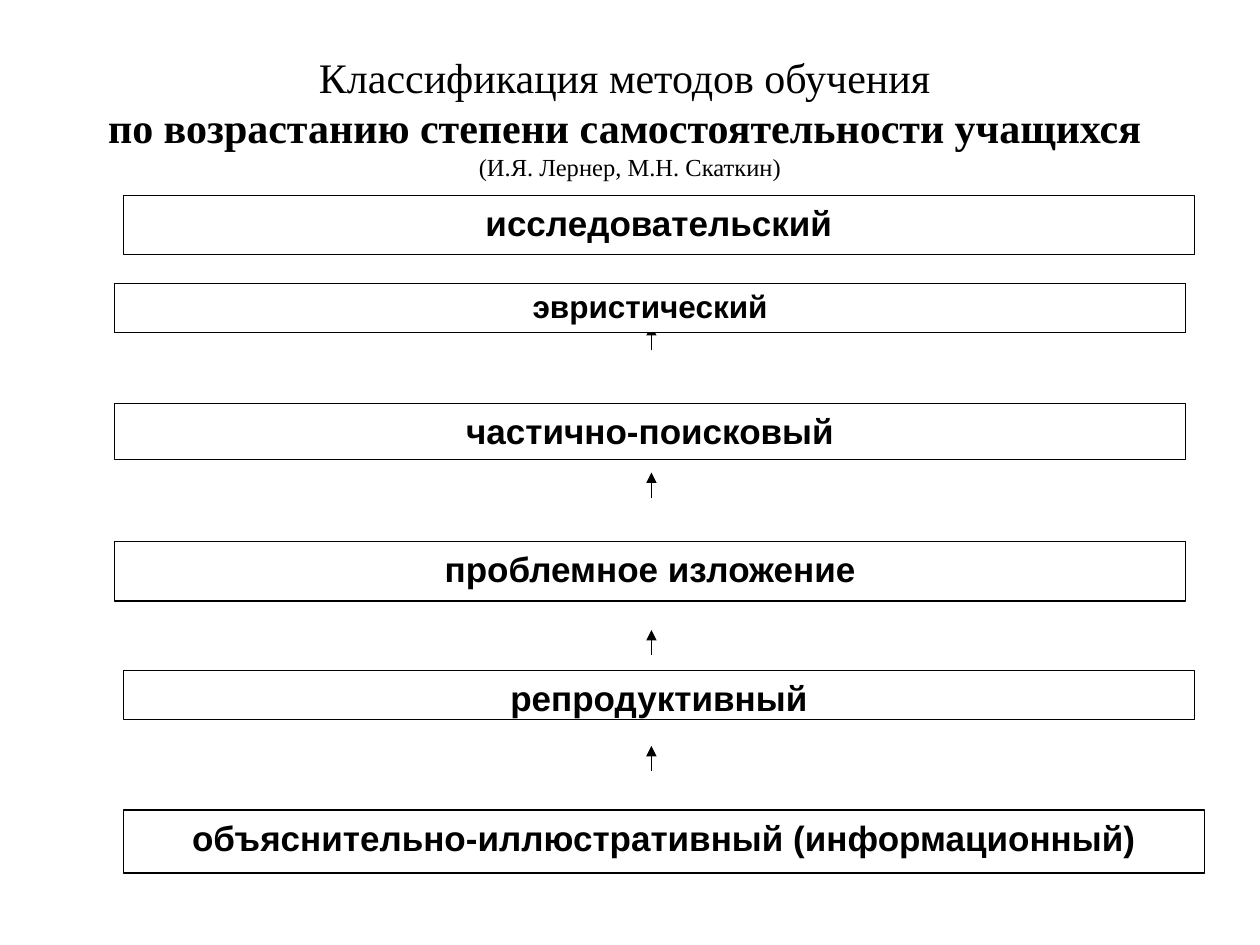
from copy import deepcopy

from pptx import Presentation
from pptx.dml.color import RGBColor
from pptx.enum import shapes, text
from pptx.oxml import ns, xmlchemy
from pptx.util import Inches, Pt

BLACK = RGBColor(0, 0, 0)
WHITE = RGBColor(255, 255, 255)

HEADING = [
    ("Классификация методов обучения ", 24, False),
    ("по возрастанию степени самостоятельности учащихся ", 24, True),
    ("(И.Я. Лернер, М.Н. Скаткин)", 14, False),
]
METHODS = [
    ("исследовательский", 0.98, 1.55, 8.5, 0.47),
    ("частично-поисковый", 0.91, 3.2, 8.5, 0.45),
    ("проблемное изложение", 0.91, 4.3, 8.5, 0.47),
    ("репродуктивный", 0.98, 5.32, 8.5, 0.39),
    ("объяснительно-иллюстративный (информационный)", 0.98, 6.43, 8.58, 0.5),
]
ARROW_X, ARROW_LENGTH = 5.17, 0.2
ARROW_TIPS = [5, 3.75, 2.58, 5.92]


def add_child(parent, tag, **attributes):
    """Append a DrawingML element to parent and return it."""
    child = xmlchemy.OxmlElement(tag)
    for key, value in attributes.items():
        child.set(key, value)
    parent.append(child)
    return child


class MethodSlide:
    """Hold the style and the current slide."""

    heading_font = "Times New Roman"
    method_font = "Arial"
    line_width = Pt(0.75)

    def __init__(self, deck):
        """Start a slide with only a title."""
        self.slide = deck.slides.add_slide(deck.slide_layouts[5])

    def style_run(self, run, font, size, bold):
        """Format one run in black."""
        run.font.name = font
        run.font.size = Pt(size)
        run.font.bold = bold
        run.font.color.rgb = BLACK

    def write_method(self, frame, method, size):
        """Write a centred bold method name."""
        frame.text = method
        paragraph = frame.paragraphs[0]
        paragraph.alignment = text.PP_ALIGN.CENTER
        self.style_run(paragraph.runs[0], self.method_font, size, True)

    def heading(self, lines, left, top, width, height):
        """Fill the title placeholder with differently styled lines."""
        title = self.slide.shapes.title
        title.left, title.top = Inches(left), Inches(top)
        title.width, title.height = Inches(width), Inches(height)
        frame = title.text_frame
        frame.vertical_anchor = text.MSO_ANCHOR.MIDDLE
        paragraph = frame.paragraphs[0]
        paragraph.text = "\v".join(line for line, _, _ in lines)
        paragraph.alignment = text.PP_ALIGN.CENTER
        for run, (_, size, bold) in zip(paragraph.runs, lines):
            self.style_run(run, self.heading_font, size, bold)
        breaks = paragraph._p.findall(ns.qn("a:br"))
        for line_break, run in zip(breaks, paragraph.runs):
            line_break.append(deepcopy(run._r.rPr))

    def method_box(self, method, left, top, width, height):
        """Add an outlined box naming a method."""
        box = self.slide.shapes.add_shape(
            shapes.MSO_SHAPE.RECTANGLE,
            Inches(left), Inches(top), Inches(width), Inches(height))
        box.shadow.inherit = False
        box.fill.solid()
        box.fill.fore_color.rgb = WHITE
        box.line.color.rgb = BLACK
        box.line.width = self.line_width
        box.text_frame.word_wrap = True
        box.text_frame.vertical_anchor = text.MSO_ANCHOR.TOP
        self.write_method(box.text_frame, method, 20)

    def method_table(self, method, left, top, width, height):
        """Add a bordered table of one cell naming a method."""
        table = self.slide.shapes.add_table(
            1, 1, Inches(left), Inches(top), Inches(width), Inches(height)).table
        table.first_row = table.horz_banding = False
        cell = table.cell(0, 0)
        self.write_method(cell.text_frame, method, 18)
        properties = cell._tc.get_or_add_tcPr()
        for side in ("a:lnL", "a:lnR", "a:lnT", "a:lnB"):
            border = add_child(properties, side, w=str(Pt(1)))
            fill = add_child(border, "a:solidFill")
            add_child(fill, "a:srgbClr", val=str(BLACK))
        cell.fill.solid()
        cell.fill.fore_color.rgb = WHITE

    def up_arrow(self, tip):
        """Add a short arrow pointing up to the given height."""
        x = Inches(ARROW_X)
        arrow = self.slide.shapes.add_connector(
            shapes.MSO_CONNECTOR.STRAIGHT,
            x, Inches(tip + ARROW_LENGTH), x, Inches(tip))
        arrow.line.color.rgb = BLACK
        arrow.line.width = self.line_width
        add_child(arrow.line._get_or_add_ln(), "a:tailEnd", type="triangle")
        add_child(arrow._element.spPr, "a:effectLst")


def main():
    """Build and save the deck."""
    deck = Presentation()
    deck.slide_width, deck.slide_height = Inches(10), Inches(7.5)
    page = MethodSlide(deck)
    page.heading(HEADING, 0.5, 0.3, 9, 1.25)
    for method in METHODS:
        page.method_box(*method)
    for tip in ARROW_TIPS:
        page.up_arrow(tip)
    page.method_table("эвристический", 0.91, 2.25, 8.5, 0.39)
    deck.save("out.pptx")


if __name__ == "__main__":
    main()
